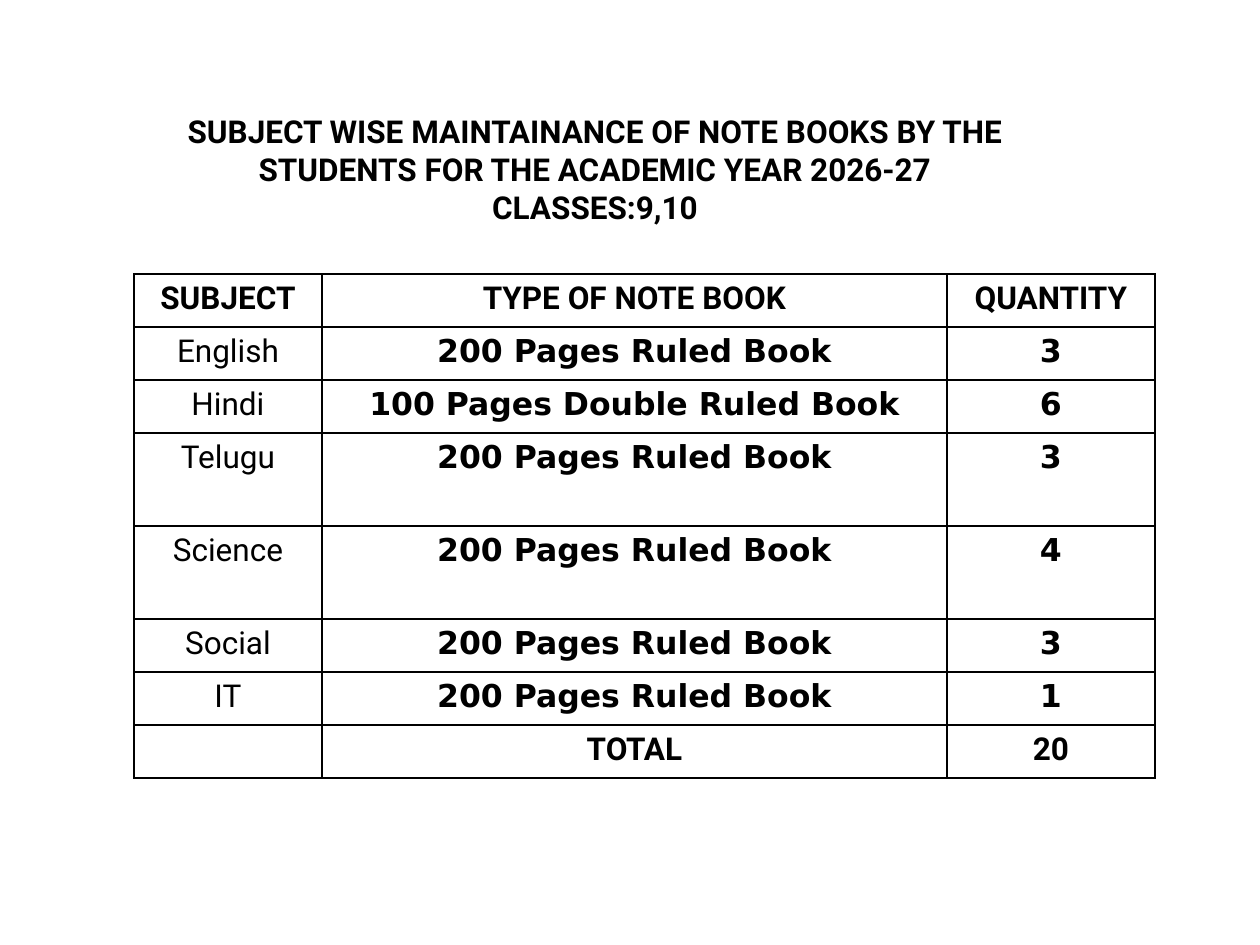
from lxml import etree
from pptx import Presentation
from pptx import util as u
from pptx.dml.color import RGBColor
from pptx.enum import text
from pptx.oxml import ns

PX = u.Inches(1) // 126
COLORS = {"ink": "000000", "paper": "FFFFFF"}
HEADING_FONT, ENTRY_FONT = "Roboto", "DejaVu Sans"


class SlideBuilder:
    """Holds the style and the current slide."""

    def __init__(self, slide, size=18, border=1):
        self.slide = slide
        self.size = u.Pt(size)
        self.border = u.Pt(border)

    def style(self, paragraph, font=HEADING_FONT, bold=True):
        paragraph.alignment = text.PP_ALIGN.CENTER
        paragraph.font.name = font
        paragraph.font.size = self.size
        paragraph.font.bold = bold
        paragraph.font.color.rgb = RGBColor.from_string(COLORS["ink"])

    def text_box(self, left, top, width, height, lines):
        box = self.slide.shapes.add_textbox(*(n * PX for n in (left, top, width, height)))
        frame = box.text_frame
        frame.word_wrap = True
        frame.text = "\n".join(lines)
        for paragraph in frame.paragraphs:
            self.style(paragraph)

    def outline(self, cell):
        properties = cell._tc.get_or_add_tcPr()
        for position, side in enumerate(("lnL", "lnR", "lnT", "lnB")):
            line = etree.Element(ns.qn(f"a:{side}"), w=str(self.border))
            fill = etree.SubElement(line, ns.qn("a:solidFill"))
            etree.SubElement(fill, ns.qn("a:srgbClr"), val=COLORS["ink"])
            properties.insert(position, line)

    def table(self, left, top, widths, heights, rows, cell_style):
        frame = self.slide.shapes.add_table(
            len(rows), len(widths), left * PX, top * PX,
            sum(widths) * PX, sum(heights) * PX)
        table = frame.table
        for column, width in zip(table.columns, widths):
            column.width = width * PX
        for r, (values, height) in enumerate(zip(rows, heights)):
            table.rows[r].height = height * PX
            for c, value in enumerate(values):
                cell = table.cell(r, c)
                cell.text = value
                cell.fill.solid()
                cell.fill.fore_color.rgb = RGBColor.from_string(COLORS["paper"])
                self.outline(cell)
                self.style(cell.text_frame.paragraphs[0], *cell_style(r, c))


RULED = "200 Pages Ruled Book"
NOTEBOOKS = [
    ("SUBJECT", "TYPE OF NOTE BOOK", "QUANTITY"),
    ("English", RULED, "3"),
    ("Hindi", "100 Pages Double Ruled Book", "6"),
    ("Telugu", RULED, "3"),
    ("Science", RULED, "4"),
    ("Social", RULED, "3"),
    ("IT", RULED, "1"),
    ("", "TOTAL", "20"),
]
TALL_SUBJECTS = ("Telugu", "Science")


def notebook_style(row, column):
    """Font and weight: header and total rows, subject names, then entries."""
    if row in (0, len(NOTEBOOKS) - 1):
        return HEADING_FONT, True
    return (HEADING_FONT, False) if column == 0 else (ENTRY_FONT, True)


def main():
    deck = Presentation()
    deck.slide_width, deck.slide_height = 1260 * PX, 945 * PX
    builder = SlideBuilder(deck.slides.add_slide(deck.slide_layouts[6]))

    # Heading
    builder.text_box(134, 106, 922, 127, [
        "SUBJECT WISE MAINTAINANCE OF NOTE BOOKS BY THE STUDENTS"
        " FOR THE ACADEMIC YEAR 2026-27",
        "CLASSES:9,10",
    ])

    # Notebooks per subject
    heights = [93 if subject in TALL_SUBJECTS else 53 for subject, *_ in NOTEBOOKS]
    builder.table(134, 274, (188, 625, 208), heights, NOTEBOOKS, notebook_style)

    deck.save("out.pptx")


if __name__ == "__main__":
    main()
